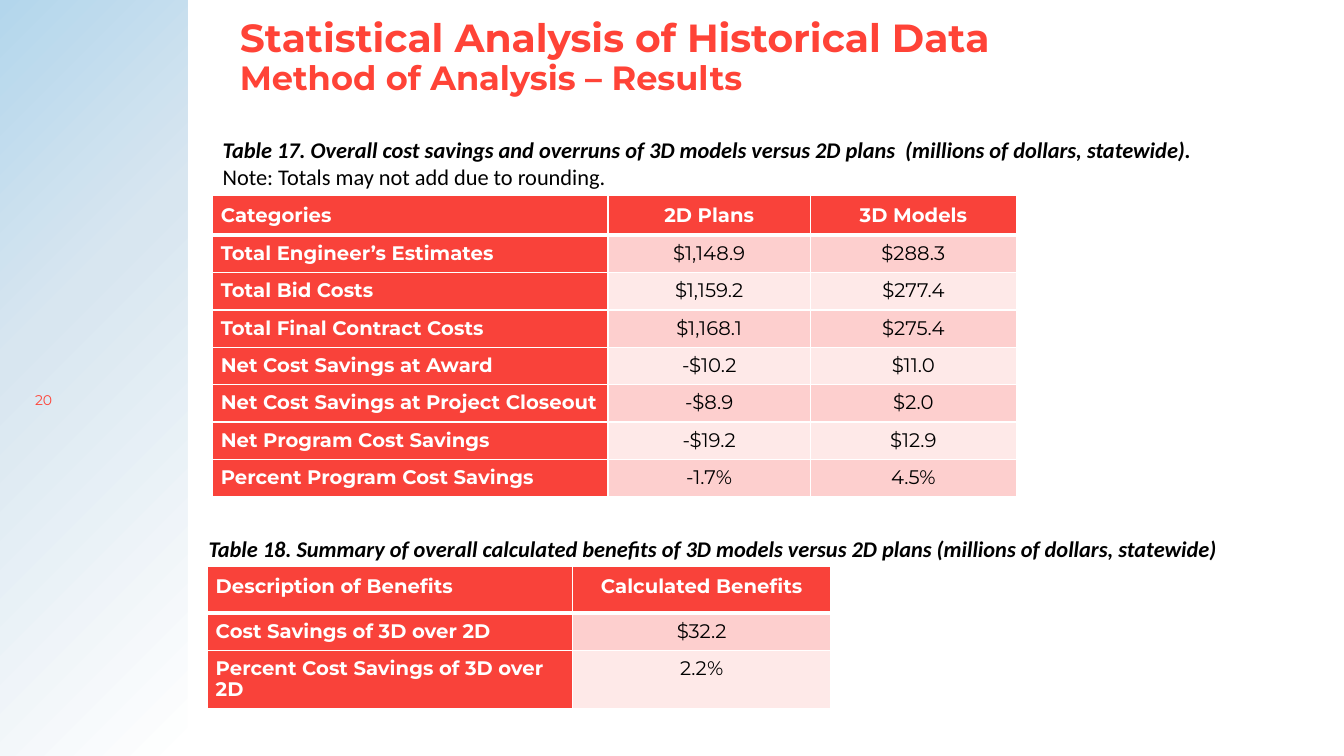
from dataclasses import dataclass

import pptx
import pptx.dml.color
import pptx.enum.shapes
import pptx.enum.text
import pptx.oxml
import pptx.oxml.ns
import pptx.util

Inches = pptx.util.Inches
Pt = pptx.util.Pt
RGBColor = pptx.dml.color.RGBColor
PP_ALIGN = pptx.enum.text.PP_ALIGN
MSO_ANCHOR = pptx.enum.text.MSO_ANCHOR

WHITE = RGBColor(0xFF, 0xFF, 0xFF)
BLACK = RGBColor(0x00, 0x00, 0x00)
RED = RGBColor(0xFF, 0x43, 0x37)
TABLE_RED = RGBColor(0xF9, 0x42, 0x3A)
BANDS = (RGBColor(0xFD, 0xCF, 0xCE), RGBColor(0xFE, 0xE9, 0xE8))
SIDEBAR_STOPS = (
    (0, RGBColor(0xB3, 0xD6, 0xEC)),
    (39, RGBColor(0xD8, 0xE6, 0xF0)),
    (100, WHITE),
)


@dataclass
class Style:
    size: float
    font: str
    color: RGBColor
    bold: bool = False
    italic: bool = False


@dataclass
class TextBox:
    box: tuple[float, float, float, float]
    paragraphs: list[str]
    styles: list[Style]  # one for each run, in reading order
    anchor: MSO_ANCHOR = MSO_ANCHOR.MIDDLE
    line_spacing: float = 1.0


@dataclass
class DataTable:
    left: float
    top: float
    col_widths: list[float]
    row_heights: list[float]
    rows: list[tuple[str, ...]]


CAPTION = Style(16, "Calibri", BLACK, bold=True, italic=True)
NOTE = Style(16, "Calibri", BLACK)
HEADING = Style(14, "Montserrat", WHITE, bold=True)
VALUE = Style(14, "Montserrat", BLACK)

TEXT_BOXES = [
    TextBox((0.25, 3.79, 1.54, 0.35), ["20"], [Style(10, "Montserrat", RED)]),
    TextBox(
        (2.28, 0.14, 10.12, 1.26),
        ["Statistical Analysis of Historical Data\vMethod of Analysis – Results"],
        [Style(28, "Montserrat", RED, bold=True), Style(24, "Montserrat", RED, bold=True)],
        MSO_ANCHOR.TOP,
        0.9,
    ),
    TextBox(
        (2.11, 1.3, 10.62, 0.64),
        [
            "Table 17. Overall cost savings and overruns of 3D models versus 2D plans  (millions of dollars, statewide).",
            "Note: Totals may not add due to rounding.",
        ],
        [CAPTION, NOTE],
    ),
    TextBox(
        (1.97, 5.26, 10.34, 0.37),
        ["Table 18. Summary of overall calculated benefits of 3D models versus 2D plans (millions of dollars, statewide)"],
        [CAPTION],
    ),
]

TABLES = [
    DataTable(2.11, 1.94, [3.92, 2.01, 2.04], [0.39] + [0.37] * 7, [
        ("Categories", "2D Plans", "3D Models"),
        ("Total Engineer’s Estimates", "$1,148.9", "$288.3"),
        ("Total Bid Costs", "$1,159.2", "$277.4"),
        ("Total Final Contract Costs", "$1,168.1", "$275.4"),
        ("Net Cost Savings at Award", "-$10.2", "$11.0"),
        ("Net Cost Savings at Project Closeout", "-$8.9", "$2.0"),
        ("Net Program Cost Savings", "-$19.2", "$12.9"),
        ("Percent Program Cost Savings", "-1.7%", "4.5%"),
    ]),
    DataTable(2.06, 5.62, [3.62, 2.56], [0.46, 0.37, 0.58], [
        ("Description of Benefits", "Calculated Benefits"),
        ("Cost Savings of 3D over 2D", "$32.2"),
        ("Percent Cost Savings of 3D over 2D", "2.2%"),
    ]),
]


def format_run(r, style: Style) -> None:
    r.font.size = Pt(style.size)
    r.font.name = style.font
    r.font.color.rgb = style.color
    r.font.bold = style.bold
    r.font.italic = style.italic


def add_sidebar(slide) -> None:
    sp = slide.shapes.add_shape(
        pptx.enum.shapes.MSO_SHAPE.RECTANGLE, 0, 0, Inches(1.86), Inches(7.5))
    sp.shadow.inherit = False
    sp.line.fill.background()
    sp.fill.background()
    # Radial gradient that starts at the top left corner
    stops = "".join(
        f'<a:gs pos="{pos * 1000}"><a:srgbClr val="{color}"/></a:gs>'
        for pos, color in SIDEBAR_STOPS)
    gradient = pptx.oxml.parse_xml(
        f'<a:gradFill {pptx.oxml.ns.nsdecls("a")} rotWithShape="1">'
        f'<a:gsLst>{stops}</a:gsLst><a:path path="circle">'
        '<a:fillToRect r="100000" b="100000"/></a:path></a:gradFill>')
    props = sp._element.spPr
    props.replace(props.find(pptx.oxml.ns.qn("a:noFill")), gradient)


def add_text(slide, item: TextBox) -> None:
    tf = slide.shapes.add_textbox(*map(Inches, item.box)).text_frame
    tf.word_wrap = True
    tf.vertical_anchor = item.anchor
    tf.text = item.paragraphs[0]
    for text in item.paragraphs[1:]:
        tf.add_paragraph().text = text
    for p in tf.paragraphs:
        p.line_spacing = item.line_spacing
    runs = [r for p in tf.paragraphs for r in p.runs]
    for r, style in zip(runs, item.styles):
        format_run(r, style)


def add_borders(cell, top: float, bottom: float) -> None:
    props = cell._tc.get_or_add_tcPr()
    for side, width in (("L", 1), ("R", 1), ("T", top), ("B", bottom)):
        props.append(pptx.oxml.parse_xml(
            f'<a:ln{side} {pptx.oxml.ns.nsdecls("a")} w="{Pt(width)}">'
            f'<a:solidFill><a:srgbClr val="{WHITE}"/></a:solidFill></a:ln{side}>'))


def fill_cell(cell, text: str, row: int, col: int) -> None:
    is_heading = row == 0 or col == 0
    add_borders(cell, 3 if row == 1 else 1, 3 if row == 0 else 1)
    cell.fill.solid()
    cell.fill.fore_color.rgb = TABLE_RED if is_heading else BANDS[(row - 1) % 2]
    cell.margin_left = cell.margin_right = Inches(0.08)
    cell.margin_top = cell.margin_bottom = Inches(0.08)
    p = cell.text_frame.paragraphs[0]
    p.text = text
    p.alignment = PP_ALIGN.LEFT if col == 0 else PP_ALIGN.CENTER
    if row > 0:
        p.line_spacing = 0.9
        p.space_after = Pt(6)
    format_run(p.runs[0], HEADING if is_heading else VALUE)


def add_data_table(slide, item: DataTable) -> None:
    table = slide.shapes.add_table(
        len(item.rows), len(item.col_widths), Inches(item.left), Inches(item.top),
        Inches(sum(item.col_widths)), Inches(sum(item.row_heights))).table
    for column, width in zip(table.columns, item.col_widths):
        column.width = Inches(width)
    for row, height in zip(table.rows, item.row_heights):
        row.height = Inches(height)
    for i, texts in enumerate(item.rows):
        for j, text in enumerate(texts):
            fill_cell(table.cell(i, j), text, i, j)


def main() -> None:
    prs = pptx.Presentation()
    prs.slide_width = Inches(13.33)
    prs.slide_height = Inches(7.5)
    slide = prs.slides.add_slide(prs.slide_layouts[6])
    add_sidebar(slide)
    for item in TEXT_BOXES:
        add_text(slide, item)
    for item in TABLES:
        add_data_table(slide, item)
    prs.save("out.pptx")


if __name__ == "__main__":
    main()
